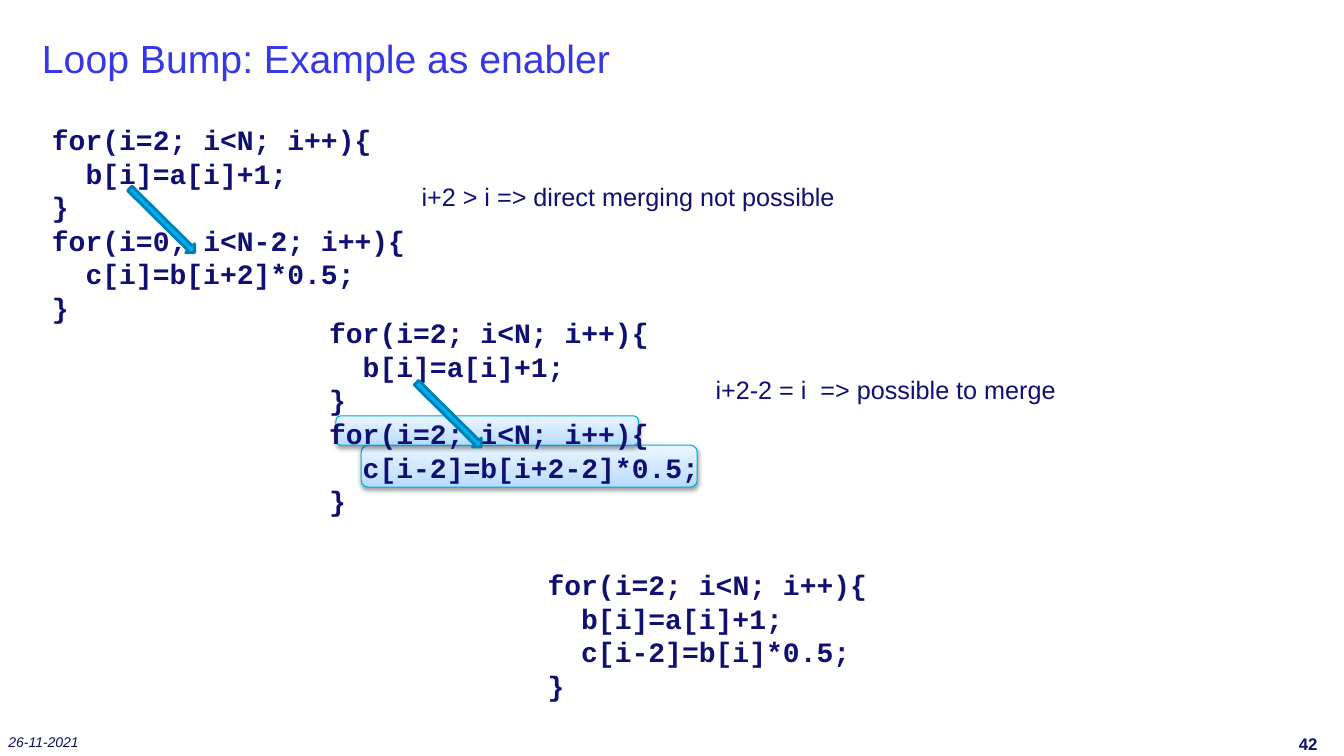
"""Build the slide showing loop bumping as an enabler for loop merging."""
from dataclasses import dataclass

from pptx import Presentation
from pptx.dml.color import RGBColor
from pptx.enum.shapes import MSO_SHAPE as SHAPE
from pptx.enum.text import MSO_ANCHOR as ANCHOR, MSO_AUTO_SIZE as AUTO, PP_ALIGN as ALIGN
from pptx.oxml import parse_xml
from pptx.oxml.ns import nsdecls, qn
from pptx.util import Pt

PX = 9525
INDENT = 32
COLORS = {
    "title": "3737E3",
    "text": "101073",
    "date": "0C0C61",
    "arrow": "00AEEF",
    "arrow_line": "0081B1",
    "mark_line": "00AAEA",
    "mark_low": "B5DCFF",
    "mark_mid": "CBE5FF",
    "mark_high": "EBF5FF",
    "shadow": "000000",
}
GRADIENT = ((0, "mark_low"), (35, "mark_mid"), (100, "mark_high"))
FORMATS = {
    "title": {"name": "Arial", "size": Pt(28), "bold": False},
    "code": {"name": "Courier New", "size": Pt(20), "bold": True},
    "note": {"name": "Arial", "size": Pt(18)},
    "number": {"name": "Arial", "size": Pt(12), "bold": True},
    "date": {"name": "Arial", "size": Pt(10), "italic": True},
}
FITTED = {"word_wrap": False, "auto_size": AUTO.SHAPE_TO_FIT_TEXT}
FRAMED = {"word_wrap": True, "vertical_anchor": ANCHOR.MIDDLE, "margin_left": 0,
          "margin_top": 0, "margin_right": 0, "margin_bottom": 0}


@dataclass(frozen=True)
class Box:
    """A rectangle in px."""
    x: int
    y: int
    w: int
    h: int

    def emu(self) -> tuple[int, ...]:
        """Return the rectangle in EMU."""
        return tuple(v * PX for v in (self.x, self.y, self.w, self.h))


@dataclass(frozen=True)
class Label:
    """Lines of text in one style; the indented ones are listed by index."""
    box: Box
    lines: tuple[str, ...]
    style: str
    color: str = "text"
    indented: tuple[int, ...] = ()


MARKS = (Box(344, 424, 320, 40), Box(320, 396, 288, 28))
ARROWS = (Box(111, 204, 87, 12), Box(384, 389, 87, 12))
HEAD = "for(i=2; i<N; i++){"
PRODUCE = "b[i]=a[i]+1;"
CODES = (
    Label(Box(304, 296, 374, 204),
          (HEAD, PRODUCE, "}", HEAD, "c[i-2]=b[i+2-2]*0.5;", "}"),
          "code", indented=(1, 4)),
    Label(Box(40, 112, 359, 204),
          (HEAD, PRODUCE, "}", "for(i=0; i<N-2; i++){", "c[i]=b[i+2]*0.5;", "}"),
          "code", indented=(1, 4)),
    Label(Box(512, 536, 326, 139),
          (HEAD, PRODUCE, "c[i-2]=b[i]*0.5;", "}"),
          "code", indented=(1, 2)),
)
NOTES = (
    Label(Box(392, 168, 417, 38), ("i+2 > i => direct merging not possible",), "note"),
    Label(Box(672, 352, 347, 38), ("i+2-2 = i  => possible to merge",), "note"),
)
TITLE = Label(Box(40, 8, 1208, 94), ("Loop Bump: Example as enabler",), "title", "title")
FOOTERS = (
    Label(Box(1237, 696, 42, 24), ("42",), "number"),
    Label(Box(8, 695, 150, 24), ("26-11-2021",), "date", "date"),
)


def rgb(name: str) -> RGBColor:
    """Look up a colour."""
    return RGBColor.from_string(COLORS[name])


def write(sp, label: Label, frame: dict) -> None:
    """Place a text shape and fill it with formatted lines."""
    sp.left, sp.top, sp.width, sp.height = label.box.emu()
    tf = sp.text_frame
    for key, value in frame.items():
        setattr(tf, key, value)
    for i, line in enumerate(label.lines):
        p = tf.add_paragraph() if i else tf.paragraphs[0]
        p.alignment = ALIGN.LEFT
        if i in label.indented:
            p._p.get_or_add_pPr().set("marL", str(INDENT * PX))
        r = p.add_run()
        r.text = line
        for key, value in FORMATS[label.style].items():
            setattr(r.font, key, value)
        r.font.color.rgb = rgb(label.color)


def add_label(shapes, label: Label, frame: dict) -> None:
    """Add a text box."""
    write(shapes.add_textbox(*label.box.emu()), label, frame)


def add_outlined(shapes, kind: SHAPE, box: Box, line: str, width: float):
    """Add a preset shape with a plain outline and no shadow."""
    sp = shapes.add_shape(kind, *box.emu())
    sp.shadow.inherit = False
    sp.line.color.rgb = rgb(line)
    sp.line.width = Pt(width)
    return sp


def add_mark(shapes, box: Box) -> None:
    """Add a rounded highlight with a gradient and a soft shadow."""
    sp = add_outlined(shapes, SHAPE.ROUNDED_RECTANGLE, box, "mark_line", 0.75)
    sp.fill.gradient()
    sp.fill.gradient_angle = 90
    spPr = sp._element.spPr
    stops = spPr.find(qn("a:gradFill")).find(qn("a:gsLst"))
    for stop in list(stops):
        stops.remove(stop)
    for pos, color in GRADIENT:
        stops.append(parse_xml(
            f'<a:gs {nsdecls("a")} pos="{pos * 1000}">'
            f'<a:srgbClr val="{COLORS[color]}"/></a:gs>'))
    spPr.find(qn("a:effectLst")).append(parse_xml(
        f'<a:outerShdw {nsdecls("a")} blurRad="40000" dist="20000" dir="5400000" '
        f'rotWithShape="0"><a:srgbClr val="{COLORS["shadow"]}">'
        f'<a:alpha val="38000"/></a:srgbClr></a:outerShdw>'))


def add_arrow(shapes, box: Box) -> None:
    """Add a diagonal dependency arrow."""
    sp = add_outlined(shapes, SHAPE.RIGHT_ARROW, box, "arrow_line", 2)
    sp.fill.solid()
    sp.fill.fore_color.rgb = rgb("arrow")
    sp.rotation = 44.7


def main() -> None:
    """Build and save the slide."""
    prs = Presentation()
    prs.slide_width, prs.slide_height = 1280 * PX, 720 * PX
    shapes = prs.slides.add_slide(prs.slide_layouts[5]).shapes
    write(shapes.title, TITLE, FRAMED)
    for box in MARKS:
        add_mark(shapes, box)
    for label in CODES + NOTES:
        add_label(shapes, label, FITTED)
    for label in FOOTERS:
        add_label(shapes, label, FRAMED)
    for box in ARROWS:
        add_arrow(shapes, box)
    prs.save("out.pptx")


if __name__ == "__main__":
    main()
